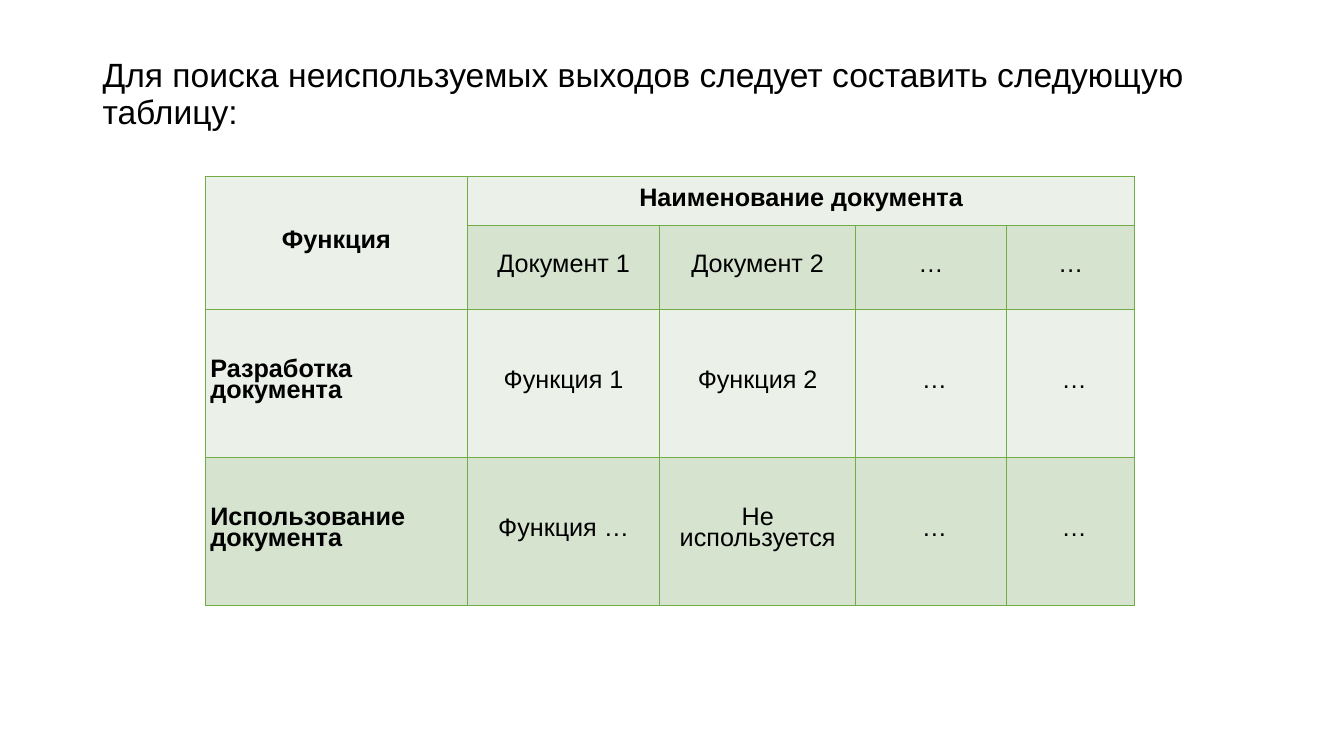
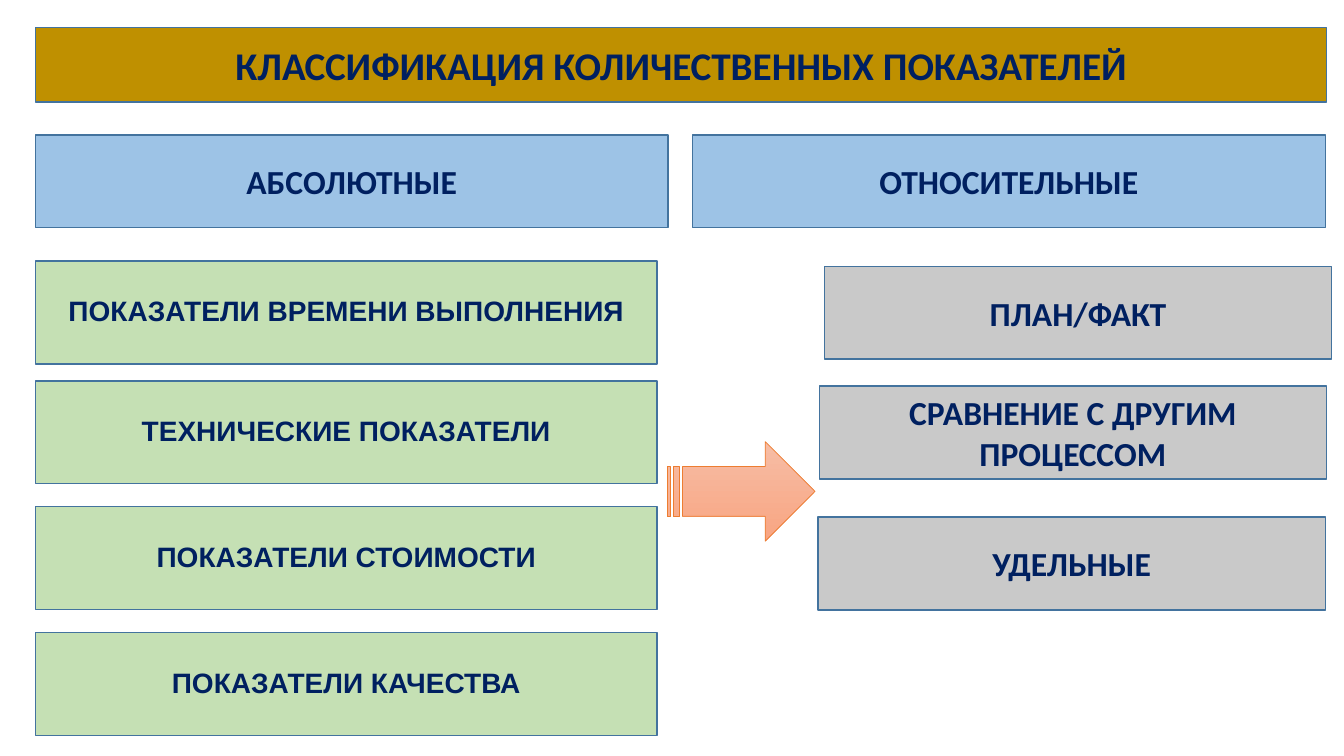
from pptx import Presentation
from pptx.dml.color import RGBColor as Rgb
from pptx.enum.shapes import MSO_SHAPE as Form
from pptx.enum.text import MSO_ANCHOR as Anchor, MSO_AUTO_SIZE as Fit, PP_ALIGN as Align
from pptx.oxml import parse_xml
from pptx.oxml.ns import nsdecls
from pptx.util import Cm, Pt

# Shared look
INK = {
    "black": "000000", "navy": "002060", "edge": "43739E",
    "gold": "BF9000", "blue": "9DC3E6", "green": "C5E0B4", "gray": "C9C9C9",
    "light": "EBF1E9", "dark": "D5E3CF", "grid": "70AD47",
    "peach": "F7BDA5", "coral": "F8A582", "orange": "ED7D31",
}
# Text styles: font, size, colour, bold, line spacing
TITLE = ("Arial", 24, "black", False, 0.9)
HEAD = ("Arial", 18, "black", True, Pt(15))
CELL = ("Arial", 18, "black", False, Pt(15))
MAIN = ("Calibri", 28, "navy", True, 1.0)
GROUP = ("Calibri", 24, "navy", True, 1.0)
ITEM = ("Arial", 20, "navy", True, 0.9)


def tint(name):
    return Rgb.from_string(INK[name])


def write(frame, text, style, align=Align.CENTER):
    face, size, ink, bold, gap = style
    par = frame.paragraphs[0]
    par.alignment = align
    par.line_spacing = gap
    run = par.add_run()
    run.text = text
    font = run.font
    font.name, font.size, font.bold = face, Pt(size), bold
    font.color.rgb = tint(ink)


def place(shape, box):
    shape.left, shape.top, shape.width, shape.height = map(Cm, box)


def title(slide, box, text, style, align):
    head = slide.shapes.title
    place(head, box)
    frame = head.text_frame
    frame.word_wrap, frame.auto_size = True, Fit.NONE
    frame.vertical_anchor = Anchor.MIDDLE
    write(frame, text, style, align)
    return head


def paint(shape, fill):
    shape.fill.solid()
    shape.fill.fore_color.rgb = tint(fill)
    shape.line.color.rgb = tint("edge")
    shape.line.width = Pt(1)


def panel(slide, box, text, fill, style):
    shape = slide.shapes.add_shape(Form.RECTANGLE, *map(Cm, box))
    shape.shadow.inherit = False
    paint(shape, fill)
    frame = shape.text_frame
    frame.word_wrap = True
    frame.vertical_anchor = Anchor.MIDDLE
    write(frame, text, style)


def border(cell):
    props = cell._tc.get_or_add_tcPr()
    for side in "LRTB":
        props.append(parse_xml(
            f'<a:ln{side} {nsdecls("a")} w="12700"><a:solidFill>'
            f'<a:srgbClr val="{INK["grid"]}"/></a:solidFill></a:ln{side}>'))


def matrix(slide, box, cols, rows, data):
    table = slide.shapes.add_table(len(rows), len(cols), *map(Cm, box)).table
    table.first_row = table.horz_banding = False
    for col, width in zip(table.columns, cols):
        col.width = Cm(width)
    for row, height in zip(table.rows, rows):
        row.height = Cm(height)
    # Header cells that span rows or columns
    table.cell(0, 0).merge(table.cell(1, 0))
    table.cell(0, 1).merge(table.cell(0, len(cols) - 1))
    for r, line in enumerate(data):
        for c, text in enumerate(line):
            cell = table.cell(r, c)
            border(cell)
            cell.fill.solid()
            cell.fill.fore_color.rgb = tint("dark" if r % 2 else "light")
            cell.vertical_anchor = Anchor.MIDDLE
            cell.margin_left = cell.margin_right = Cm(0.12)
            cell.margin_top = cell.margin_bottom = Cm(0.12)
            if text:
                style = HEAD if r == 0 or c == 0 else CELL
                side = Align.LEFT if c == 0 and r > 1 else Align.CENTER
                write(cell.text_frame, text, style, side)


def arrow(slide, box):
    shape = slide.shapes.add_shape(Form.STRIPED_RIGHT_ARROW, *map(Cm, box))
    shape.shadow.inherit = False
    shape.fill.gradient()
    shape.fill.gradient_angle = 270
    for stop, ink in zip(shape.fill.gradient_stops, ("peach", "coral")):
        stop.color.rgb = tint(ink)
    shape.line.color.rgb = tint("orange")
    shape.line.width = Pt(0.5)


def outputs(slide):
    head = title(
        slide, (2.33, 1.02, 29.21, 3.68),
        "Для поиска неиспользуемых выходов следует составить следующую таблицу:",
        TITLE, Align.LEFT)
    head.text_frame.margin_bottom = Cm(1.05)
    matrix(slide, (5.18, 4.45, 23.42, 10.8),
           (6.6, 4.85, 4.93, 3.81, 3.23), (1.24, 2.1, 3.73, 3.73), (
        ("Функция", "Наименование документа", "", "", ""),
        ("", "Документ 1", "Документ 2", "…", "…"),
        ("Разработка документа", "Функция 1", "Функция 2", " …", " …"),
        ("Использование документа", "Функция …", "Не используется", " …", " …"),
    ))


def absolute(slide, box):
    x, y, wide, high = box
    panel(slide, (x, y, wide, high), "АБСОЛЮТНЫЕ", "blue", GROUP)
    # The first measure is the slide title
    size = (15.67, 2.59)
    first = title(slide, (x, y + 3.18, *size),
                  "ПОКАЗАТЕЛИ ВРЕМЕНИ ВЫПОЛНЕНИЯ", ITEM, Align.CENTER)
    paint(first, "green")
    for down, text in ((6.2, "ТЕХНИЧЕСКИЕ ПОКАЗАТЕЛИ"),
                       (9.37, "ПОКАЗАТЕЛИ СТОИМОСТИ"),
                       (12.54, "ПОКАЗАТЕЛИ КАЧЕСТВА")):
        panel(slide, (x, y + down, *size), text, "green", ITEM)


def relative(slide, box):
    x, y, wide, high = box
    panel(slide, box, "ОТНОСИТЕЛЬНЫЕ", "blue", GROUP)
    for right, down, text in ((3.33, 3.31, "ПЛАН/ФАКТ"),
                              (3.2, 6.33, "СРАВНЕНИЕ С ДРУГИМ ПРОЦЕССОМ"),
                              (3.17, 9.63, "УДЕЛЬНЫЕ")):
        panel(slide, (x + right, y + down, 12.78, high), text, "gray", GROUP)


def measures(slide):
    panel(slide, (0.89, 0.69, 32.54, 1.88),
          "КЛАССИФИКАЦИЯ КОЛИЧЕСТВЕННЫХ ПОКАЗАТЕЛЕЙ", "gold", MAIN)
    absolute(slide, (0.89, 3.4, 15.95, 2.34))
    relative(slide, (17.45, 3.4, 15.95, 2.34))
    arrow(slide, (16.81, 11.13, 3.73, 2.51))


def main():
    deck = Presentation()
    deck.slide_width, deck.slide_height = Cm(33.87), Cm(19.05)
    for build in (outputs, measures):
        build(deck.slides.add_slide(deck.slide_layouts[5]))
    deck.save("out.pptx")


if __name__ == "__main__":
    main()
